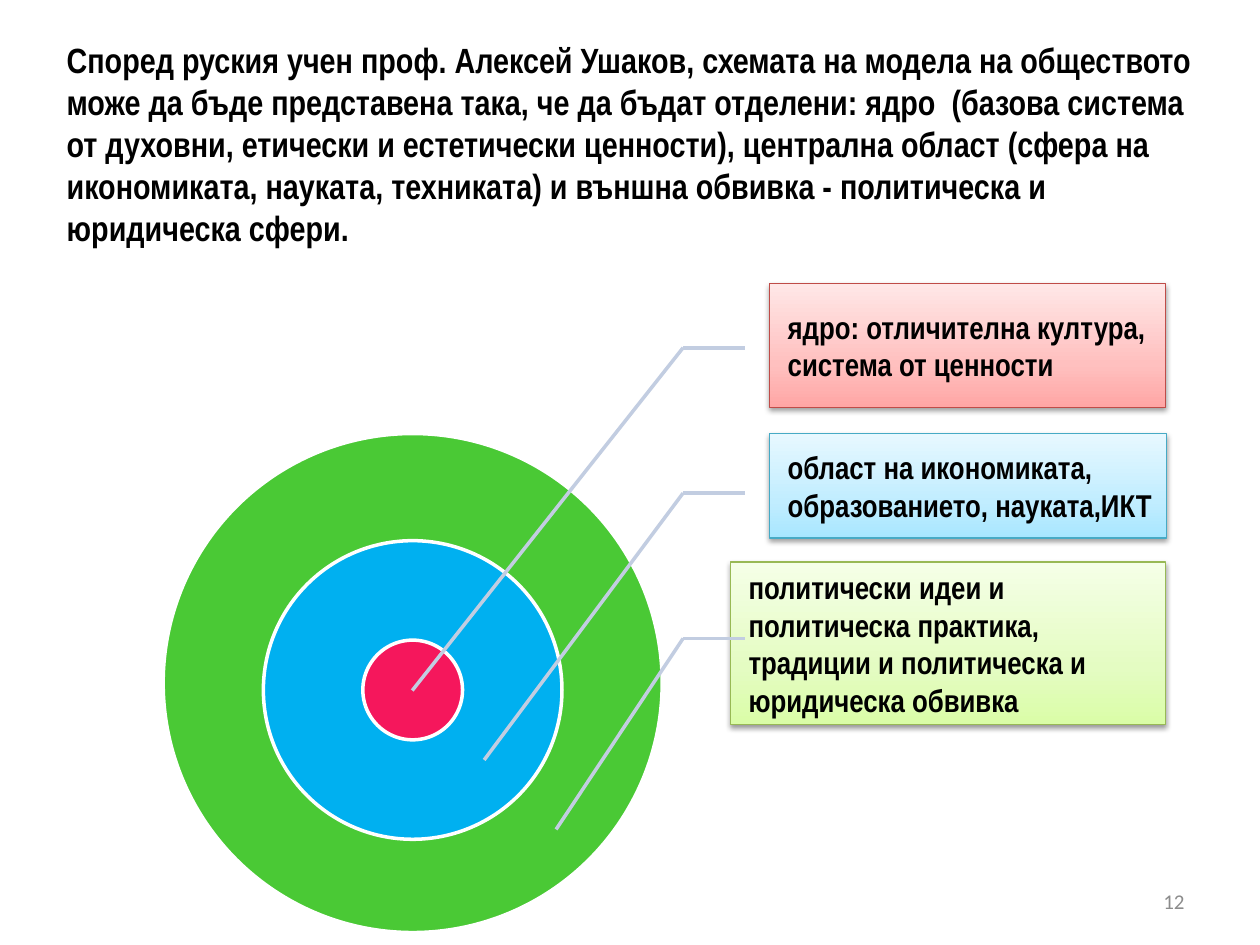
from dataclasses import dataclass

from lxml import etree
from pptx import Presentation
from pptx.dml.color import RGBColor
from pptx.enum.shapes import MSO_CONNECTOR, MSO_SHAPE
from pptx.enum.text import MSO_ANCHOR, MSO_AUTO_SIZE, PP_ALIGN
from pptx.oxml import parse_xml
from pptx.oxml.ns import qn
from pptx.util import Cm, Pt

OVAL, RECT = MSO_SHAPE.OVAL, MSO_SHAPE.RECTANGLE
STRAIGHT = MSO_CONNECTOR.STRAIGHT
MIDDLE, BOTTOM = MSO_ANCHOR.MIDDLE, MSO_ANCHOR.BOTTOM
LEFT, RIGHT = PP_ALIGN.LEFT, PP_ALIGN.RIGHT
NO_AUTOFIT = MSO_AUTO_SIZE.NONE
DRAWING_NS = "http://schemas.openxmlformats.org/drawingml/2006/main"


@dataclass(frozen=True)
class Theme:
    text: str = "000000"
    muted: str = "8C8C8C"
    ring_line: str = "FFFFFF"
    leader: str = "C2CDE1"
    font: str = "Arial Narrow"
    number_font: str = "Calibri"
    title_size: int = 20
    label_size: int = 18
    number_size: int = 12
    line_width: float = 2
    border_width: float = 0.75


@dataclass(frozen=True)
class Ring:
    center_y: float
    diameter: float
    color: str


@dataclass(frozen=True)
class Label:
    text: str
    left: float
    top: float
    width: float
    height: float
    gradient: tuple[str, str, str]
    border: str


THEME = Theme()
CENTER_X = 8.32
ELBOW_X, LEADER_END_X = 13.77, 15.01
LEADER_Y, LEADER_STEP = 7.01, 2.93
TARGET_X, TARGET_Y = 8.31, 13.92
TARGET_STEP_X, TARGET_STEP_Y = 1.45, 1.4

TITLE = (
    "Според руския учен проф. Алексей Ушаков, схемата на модела на обществото "
    "може да бъде представена така, че да бъдат отделени: ядро  (базова система "
    "от духовни, етически и естетически ценности), централна област (сфера на "
    "икономиката, науката, техниката) и външна обвивка - политическа и "
    "юридическа сфери."
)
RINGS = (
    Ring(13.77, 10.06, "4AC935"),
    Ring(13.91, 6.02, "00B0F0"),
    Ring(13.91, 2.01, "F5175C"),
)
LABELS = (
    Label("ядро: отличителна култура, система от ценности",
          15.52, 5.72, 7.98, 2.49, ("FFA6A5", "FFC0BF", "FFE7E7"), "BF4C48"),
    Label("област на икономиката, образованието, науката,ИКТ",
          15.52, 8.74, 8, 2.11, ("A7E6FF", "C1EDFF", "E7F8FF"), "46AAC5"),
    Label("политически идеи и политическа практика, традиции и политическа "
          "и юридическа обвивка",
          14.73, 11.33, 8.76, 3.28, ("DAFDA7", "E4FCC2", "F5FFE7"), "98B955"),
)


def rgb(color: str) -> RGBColor:
    return RGBColor.from_string(color)


def write_text(tf, text: str, font: str, size: int, color: str,
               bold: bool, align, anchor) -> None:
    tf.word_wrap = True
    tf.auto_size = NO_AUTOFIT
    tf.vertical_anchor = anchor
    p = tf.paragraphs[0]
    p.text = text
    p.alignment = align
    p.font.name, p.font.size, p.font.bold = font, Pt(size), bold
    p.font.color.rgb = rgb(color)


def set_gradient(s, colors: tuple[str, str, str]) -> None:
    """Fill upwards with three colours at 0, 35 and 100 percent."""
    stops = "".join(
        f'<a:gs pos="{pos * 1000}"><a:srgbClr val="{color}"/></a:gs>'
        for pos, color in zip((0, 35, 100), colors)
    )
    s.fill.background()
    no_fill = s._element.spPr.find(qn("a:noFill"))
    no_fill.getparent().replace(no_fill, parse_xml(
        f'<a:gradFill xmlns:a="{DRAWING_NS}" rotWithShape="1"><a:gsLst>{stops}'
        '</a:gsLst><a:lin ang="16200000" scaled="1"/></a:gradFill>'
    ))


def set_drop_shadow(s) -> None:
    s.shadow.inherit = False
    s._element.spPr.find(qn("a:effectLst")).append(parse_xml(
        f'<a:outerShdw xmlns:a="{DRAWING_NS}" blurRad="{Pt(3.1)}" dist="{Pt(1.6)}" '
        'dir="5400000" rotWithShape="0"><a:srgbClr val="000000">'
        '<a:alpha val="38000"/></a:srgbClr></a:outerShdw>'
    ))


def draw_ring(slide, ring: Ring) -> None:
    radius = ring.diameter / 2
    s = slide.shapes.add_shape(OVAL, Cm(CENTER_X - radius), Cm(ring.center_y - radius),
                               Cm(ring.diameter), Cm(ring.diameter))
    s.shadow.inherit = False
    s.fill.solid()
    s.fill.fore_color.rgb = rgb(ring.color)
    s.line.color.rgb = rgb(THEME.ring_line)
    s.line.width = Pt(THEME.line_width)


def draw_label(slide, label: Label) -> None:
    s = slide.shapes.add_shape(RECT, Cm(label.left), Cm(label.top),
                               Cm(label.width), Cm(label.height))
    set_gradient(s, label.gradient)
    s.line.color.rgb = rgb(label.border)
    s.line.width = Pt(THEME.border_width)
    set_drop_shadow(s)
    tf = s.text_frame
    tf.margin_left = Cm(0.36)
    tf.margin_top = tf.margin_right = tf.margin_bottom = Cm(0.08)
    write_text(tf, label.text, THEME.font, THEME.label_size, THEME.text,
               True, LEFT, MIDDLE)


def draw_leader(slide, index: int) -> None:
    """Draw a short level line and a slanted one from its elbow into a ring."""
    y = LEADER_Y + index * LEADER_STEP
    target = (TARGET_X + index * TARGET_STEP_X, TARGET_Y + index * TARGET_STEP_Y)
    for end_x, end_y in ((LEADER_END_X, y), target):
        line = slide.shapes.add_connector(STRAIGHT, Cm(ELBOW_X), Cm(y),
                                          Cm(end_x), Cm(end_y))
        line.line.color.rgb = rgb(THEME.leader)
        line.line.width = Pt(THEME.line_width)
        etree.SubElement(line._element.spPr, qn("a:effectLst"))


def main() -> None:
    prs = Presentation()
    prs.slide_width, prs.slide_height = Cm(25.4), Cm(19.05)
    slide = prs.slides.add_slide(prs.slide_layouts[5])

    title = slide.shapes.title
    title.left, title.top = Cm(1.09), Cm(0.43)
    title.width, title.height = Cm(23.8), Cm(4.7)
    write_text(title.text_frame, TITLE, THEME.font, THEME.title_size, THEME.text,
               True, LEFT, BOTTOM)

    for ring in RINGS:
        draw_ring(slide, ring)
    for index, label in enumerate(LABELS):
        draw_label(slide, label)
        draw_leader(slide, index)

    number = slide.shapes.add_textbox(Cm(18.21), Cm(17.65), Cm(5.92), Cm(1.02))
    write_text(number.text_frame, "12", THEME.number_font, THEME.number_size,
               THEME.muted, False, RIGHT, MIDDLE)

    prs.save("out.pptx")


if __name__ == "__main__":
    main()
